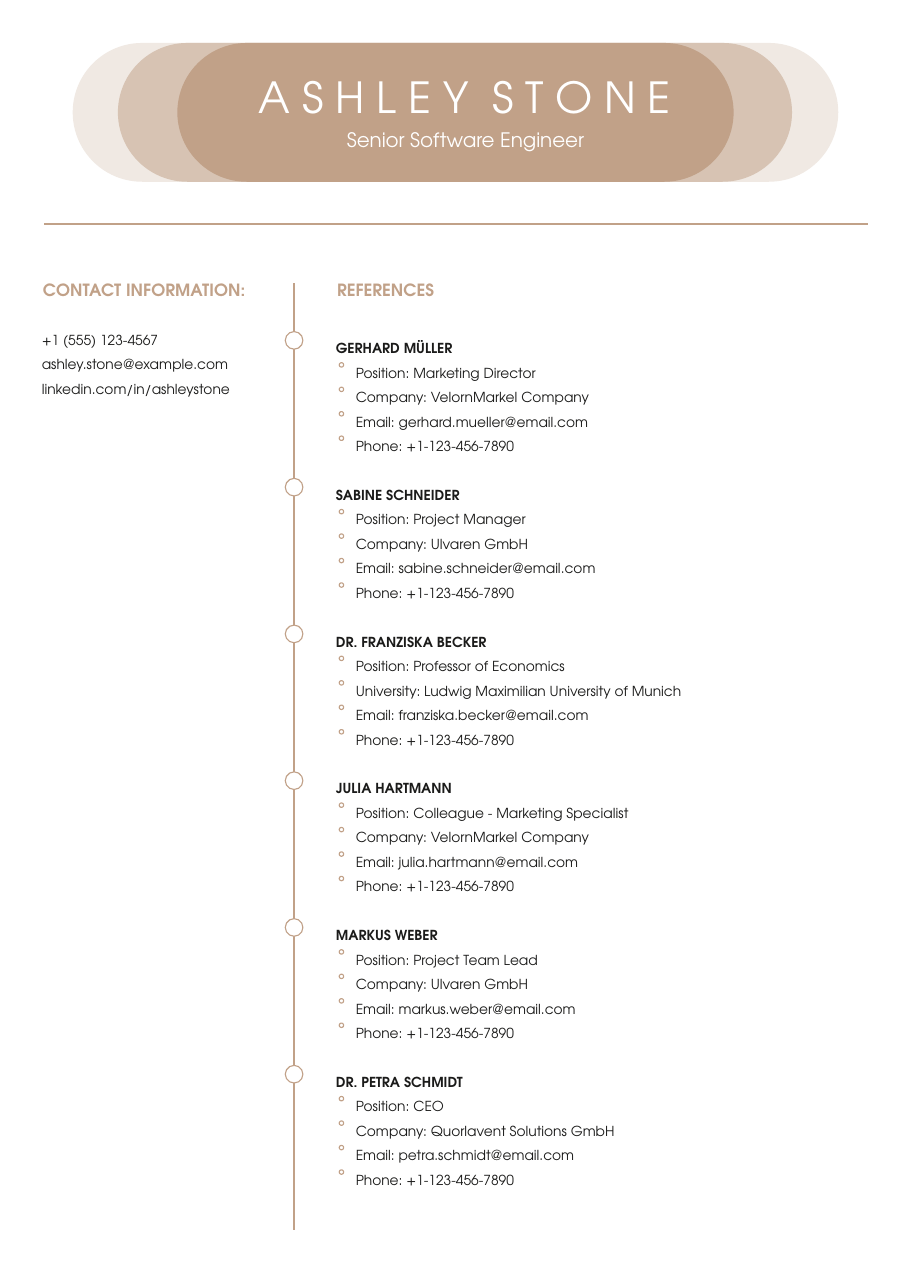
from pptx import Presentation
from pptx.dml.color import RGBColor
from pptx.enum.shapes import MSO_CONNECTOR, MSO_SHAPE
from pptx.enum.text import MSO_ANCHOR, MSO_AUTO_SIZE, PP_ALIGN
from pptx.oxml.ns import qn
from pptx.util import Inches, Pt
from lxml import etree

OVAL, PILL = MSO_SHAPE.OVAL, MSO_SHAPE.ROUNDED_RECTANGLE
STRAIGHT = MSO_CONNECTOR.STRAIGHT
LEFT, CENTER = PP_ALIGN.LEFT, PP_ALIGN.CENTER
TOP, GROW = MSO_ANCHOR.TOP, MSO_AUTO_SIZE.SHAPE_TO_FIT_TEXT

FONT = "TeX Gyre Adventor"
TAN, INK, WHITE = "C1A188", "1B1B1A", "FFFFFF"

FIRST_NAME, LAST_NAME = "A S H L E Y", "S T O N E"
JOB = "Senior Software Engineer"
CONTACTS = ["+1 (555) 123-4567", "ashley.stone@example.com", "linkedin.com/in/ashleystone"]
PHONE = "Phone: +1-123-456-7890"
REFERENCES = [
    ("GERHARD MÜLLER", "Position: Marketing Director",
     "Company: VelornMarkel Company", "Email: gerhard.mueller@email.com"),
    ("SABINE SCHNEIDER", "Position: Project Manager",
     "Company: Ulvaren GmbH", "Email: sabine.schneider@email.com"),
    ("DR. FRANZISKA BECKER", "Position: Professor of Economics",
     "University: Ludwig Maximilian University of Munich", "Email: franziska.becker@email.com"),
    ("JULIA HARTMANN", "Position: Colleague - Marketing Specialist",
     "Company: VelornMarkel Company", "Email: julia.hartmann@email.com"),
    ("MARKUS WEBER", "Position: Project Team Lead",
     "Company: Ulvaren GmbH", "Email: markus.weber@email.com"),
    ("DR. PETRA SCHMIDT", "Position: CEO",
     "Company: Quorlavent Solutions GmbH", "Email: petra.schmidt@email.com"),
]
BANNER_PILLS = [(0.66, 6.95, "F0E9E3"), (1.07, 6.12, "D7C3B3"), (1.61, 5.05, TAN)]

HEADING_TOP, LIST_TOP, LAST_TOP = 2.54, 3.01, 9.67
ENTRY_PITCH = (LAST_TOP - LIST_TOP) / (len(REFERENCES) - 1)
LINE_PITCH = ENTRY_PITCH / 6
TIMELINE, NODE, DOT = 2.67, 0.16, 0.04
NAME_LEFT, DOT_LEFT, DETAIL_LEFT, DETAIL_WIDTH = 3.05, 3.08, 3.23, 3.04

deck = Presentation()
deck.slide_width, deck.slide_height = Inches(8.27), Inches(11.69)
page = deck.slides.add_slide(deck.slide_layouts[6])


def color(value):
    return RGBColor.from_string(value)


def add_text(text, left, top, width, height, size=9, tint=INK, bold=False,
             align=LEFT, spacing=None):
    box = page.shapes.add_textbox(Inches(left), Inches(top), Inches(width), Inches(height))
    frame = box.text_frame
    frame.margin_left = frame.margin_right = frame.margin_top = frame.margin_bottom = 0
    frame.word_wrap, frame.auto_size, frame.vertical_anchor = True, GROW, TOP
    para = frame.paragraphs[0]
    para.alignment = align
    if spacing:
        para.line_spacing = spacing
    spans = []
    for part in [text] if isinstance(text, str) else text:
        span = para.add_run()
        span.text = part
        span.font.name, span.font.size, span.font.bold = FONT, Pt(size), bold
        span.font.color.rgb = color(tint)
        spans.append(span)
    return spans


def add_figure(kind, left, top, width, height, fill=None, line=None):
    figure = page.shapes.add_shape(kind, Inches(left), Inches(top), Inches(width), Inches(height))
    figure.shadow.inherit = False
    if fill:
        figure.fill.solid()
        figure.fill.fore_color.rgb = color(fill)
    else:
        figure.fill.background()
    if line:
        figure.line.color.rgb = color(line)
        figure.line.width = Pt(0.75)
    else:
        figure.line.fill.background()
    return figure


def add_rule(x1, y1, x2, y2):
    rule = page.shapes.add_connector(STRAIGHT, Inches(x1), Inches(y1), Inches(x2), Inches(y2))
    rule.line.color.rgb = color(TAN)
    rule.line.width = Pt(1.5)
    etree.SubElement(rule._element.spPr, qn("a:effectLst"))


for left, width, fill in BANNER_PILLS:
    add_figure(PILL, left, 0.39, width, 1.26, fill=fill).adjustments[0] = 0.5
name_spans = add_text([FIRST_NAME, " ", LAST_NAME], 2.1, 0.64, 4.24, 0.47,
                      size=28, tint=WHITE, align=CENTER)
name_spans[1]._r.get_or_add_rPr().set("spc", "775")
add_text(JOB, 2.8, 1.16, 2.85, 0.22, size=13, tint=WHITE, align=CENTER)

add_rule(0.4, 2.03, 7.88, 2.03)
add_rule(TIMELINE, 2.57, TIMELINE, 11.16)

for heading, left, width in [("CONTACT INFORMATION:", 0.39, 2.13), ("REFERENCES", 3.06, 2.93)]:
    add_text(heading, left, HEADING_TOP, width, 0.19, size=11, tint=TAN, bold=True)

for row, contact in enumerate(CONTACTS):
    add_text(contact, 0.38, LIST_TOP + row * LINE_PITCH, 2.13, 0.15)

for entry, (name, *details) in enumerate(REFERENCES):
    top = LIST_TOP + entry * ENTRY_PITCH
    add_figure(OVAL, TIMELINE - NODE / 2, top, NODE, NODE, fill=WHITE, line=TAN)
    add_text(name, NAME_LEFT, top, DETAIL_WIDTH, 0.15, bold=True, spacing=1.5)
    for row, detail in enumerate(details + [PHONE], start=1):
        line_top = top + row * LINE_PITCH
        add_figure(OVAL, DOT_LEFT, line_top + 0.06, DOT, DOT, line=TAN)
        add_text(detail, DETAIL_LEFT, line_top, DETAIL_WIDTH, 0.15, spacing=1.5)

deck.save("out.pptx")
